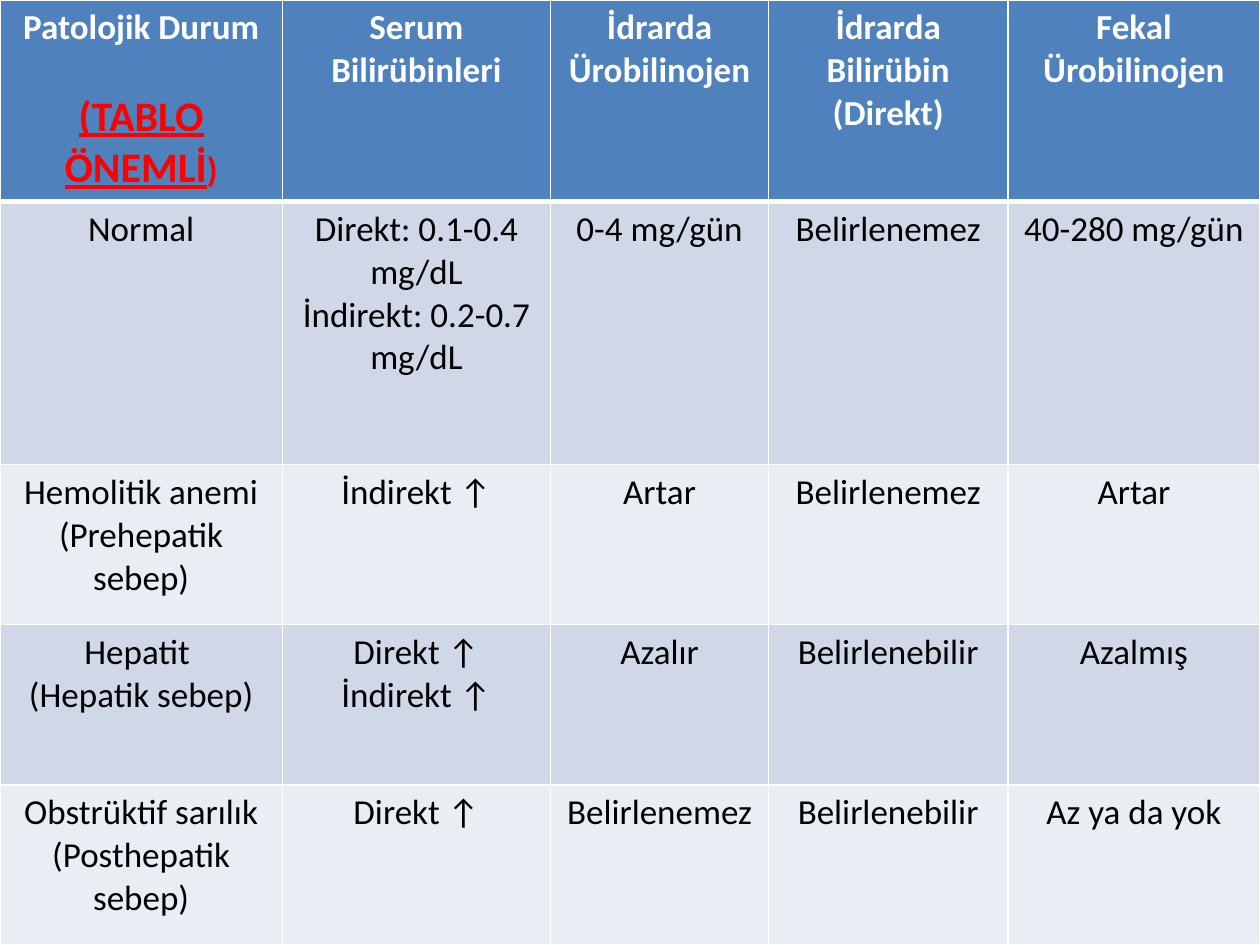
from lxml.etree import SubElement
from pptx import Presentation
from pptx.dml.color import RGBColor
from pptx.enum.text import PP_ALIGN
from pptx.oxml.ns import qn
from pptx.util import Pt

COLORS = {
    "header": "4F81BD",
    "odd_row": "D0D8E8",
    "even_row": "E9EDF4",
    "border": "FFFFFF",
    "header_text": "FFFFFF",
    "body_text": "000000",
    "warning": "FF0000",
}
COLUMN_WIDTHS = [161.3, 153.4, 124.5, 136.8, 144]
ROW_HEIGHTS = [115.2, 150.3, 91.5, 91.5, 91.5]

# Each line of a cell is one paragraph
ROWS = [
    ["Patolojik Durum", "Serum Bilirübinleri", "İdrarda Ürobilinojen",
     "İdrarda Bilirübin (Direkt)", "Fekal Ürobilinojen"],
    ["Normal", "Direkt: 0.1-0.4 mg/dL\nİndirekt: 0.2-0.7 mg/dL", "0-4 mg/gün",
     "Belirlenemez", "40-280 mg/gün"],
    ["Hemolitik anemi\n(Prehepatik sebep)", "İndirekt ↑", "Artar",
     "Belirlenemez", "Artar"],
    ["Hepatit \n(Hepatik sebep)", "Direkt ↑\nİndirekt ↑", "Azalır",
     "Belirlenebilir", "Azalmış"],
    ["Obstrüktif sarılık (Posthepatik sebep)", "Direkt ↑", "Belirlenemez",
     "Belirlenebilir", "Az ya da yok"],
]


def add_run(paragraph, text, color, bold, size=20, underline=None):
    run = paragraph.add_run()
    run.text = text
    run.font.name = "Calibri"
    run.font.size = Pt(size)
    run.font.bold = bold
    run.font.underline = underline
    run.font.color.rgb = RGBColor.from_string(COLORS[color])


def add_border(cell, side, width):
    line = SubElement(cell._tc.get_or_add_tcPr(), qn(f"a:ln{side}"), w=str(Pt(width)))
    fill = SubElement(line, qn("a:solidFill"))
    SubElement(fill, qn("a:srgbClr"), val=COLORS["border"])


presentation = Presentation()
presentation.slide_width = Pt(720)
presentation.slide_height = Pt(540)
slide = presentation.slides.add_slide(presentation.slide_layouts[6])

# Table grid
table = slide.shapes.add_table(
    len(ROWS), len(COLUMN_WIDTHS), Pt(0), Pt(0), Pt(720), Pt(540)).table
for column, width in zip(table.columns, COLUMN_WIDTHS):
    column.width = Pt(width)
for row, height in zip(table.rows, ROW_HEIGHTS):
    row.height = Pt(height)

# Cells: borders, banded fill and centred text
for row_index, texts in enumerate(ROWS):
    is_header = row_index == 0
    band = "header" if is_header else "odd_row" if row_index % 2 else "even_row"
    text_color = "header_text" if is_header else "body_text"
    top_width = 3 if row_index == 1 else 1
    bottom_width = 3 if is_header else 1
    for column_index, text in enumerate(texts):
        cell = table.cell(row_index, column_index)
        for side, width in (("L", 1), ("R", 1), ("T", top_width), ("B", bottom_width)):
            add_border(cell, side, width)
        cell.fill.solid()
        cell.fill.fore_color.rgb = RGBColor.from_string(COLORS[band])
        for line_index, line_text in enumerate(text.split("\n")):
            text_frame = cell.text_frame
            paragraph = text_frame.add_paragraph() if line_index else text_frame.paragraphs[0]
            paragraph.alignment = PP_ALIGN.CENTER
            add_run(paragraph, line_text, text_color, is_header)

# Underlined warning in the first header cell
warning = table.cell(0, 0).text_frame.add_paragraph()
warning.alignment = PP_ALIGN.CENTER
warning.space_before = Pt(24)
add_run(warning, "(TABLO ÖNEMLİ", "warning", True, size=24, underline=True)
add_run(warning, ")", "warning", True, underline=False)

presentation.save("out.pptx")
